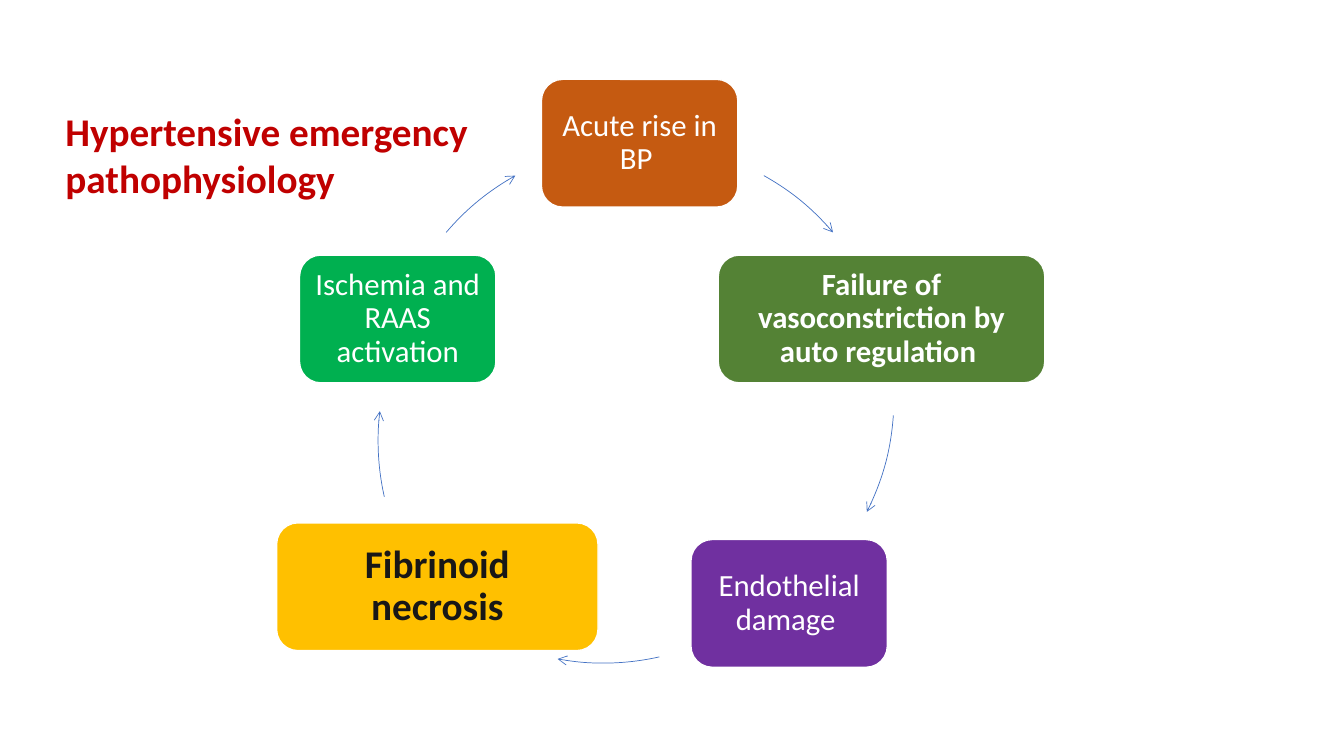
"""Build the hypertensive emergency cycle slide."""
import math
from dataclasses import dataclass

import lxml.etree
import pptx
import pptx.dml.color
import pptx.enum.shapes
import pptx.enum.text
import pptx.oxml.ns
import pptx.util

Cm = pptx.util.Cm
Pt = pptx.util.Pt
Shape = pptx.enum.shapes.MSO_SHAPE
Align = pptx.enum.text.PP_ALIGN
Anchor = pptx.enum.text.MSO_ANCHOR

TITLE = "Hypertensive emergency pathophysiology"
STAGES = [
    dict(text="Acute rise in BP ", fill="C55A11"),
    dict(text="Failure of vasoconstriction by auto regulation ", fill="548235",
         width=8.23, bold=True),
    dict(text="Endothelial damage ", fill="7030A0"),
    dict(text="Fibrinoid necrosis", fill="FFC000", width=8.1, bold=True,
         size=28, color="181717", margin=0.3, shift=(-1.33, -0.42)),
    dict(text="Ischemia and RAAS activation", fill="00B050"),
]
ARROWS = [
    dict(start=299.25, end=319.5),
    dict(start=4, end=26.7),
    dict(start=77.3, end=100.4, shift=(-0.91, 0.28)),
    dict(start=167.3, end=186.7, shift=(-0.18, 1.09)),
    dict(start=220.5, end=240.75),
]
CENTER_X, CENTER_Y, RADIUS = 16.12, 10.02, 6.41
BOX_WIDTH, BOX_HEIGHT = 4.95, 3.22
ADJUSTMENT_PER_DEGREE = 0.6


@dataclass(frozen=True)
class Theme:
    """Colours, font and type sizes."""
    font: str = "Calibri"
    title: str = "C00000"
    light: str = "FFFFFF"
    arrow: str = "4472C4"
    title_size: int = 28
    box_size: int = 22


THEME = Theme()


def rgb(value):
    """Return a colour from its hex value."""
    return pptx.dml.color.RGBColor.from_string(value)


def write(shape, text, *, size, color, bold=False, align=Align.CENTER,
          anchor=Anchor.MIDDLE, spacing=0.9, margins=(0.23, 0.23)):
    """Put formatted text in a shape."""
    frame = shape.text_frame
    frame.word_wrap = True
    frame.auto_size = pptx.enum.text.MSO_AUTO_SIZE.NONE
    frame.vertical_anchor = anchor
    frame.margin_left = frame.margin_right = Cm(margins[0])
    frame.margin_top = frame.margin_bottom = Cm(margins[1])
    para = frame.paragraphs[0]
    para.alignment = align
    para.line_spacing = spacing
    para.space_before = Pt(0)
    span = para.add_run()
    span.text = text
    span.font.name = THEME.font
    span.font.size = Pt(size)
    span.font.bold = bold
    span.font.color.rgb = rgb(color)


def add_centered(page, kind, x, y, width, height):
    """Add a shadowless preset shape around a centre point."""
    shape = page.shapes.add_shape(kind, Cm(x - width / 2), Cm(y - height / 2),
                                  Cm(width), Cm(height))
    shape.shadow.inherit = False
    return shape


def add_stage(page, index, text, fill, width=BOX_WIDTH, bold=False,
              size=THEME.box_size, color=THEME.light, margin=0.23, shift=(0, 0)):
    """Add one stage box at its place on the circle."""
    angle = math.radians(72 * index - 90)
    box = add_centered(page, Shape.ROUNDED_RECTANGLE,
                       CENTER_X + RADIUS * math.cos(angle) + shift[0],
                       CENTER_Y + RADIUS * math.sin(angle) + shift[1],
                       width, BOX_HEIGHT)
    box.fill.solid()
    box.fill.fore_color.rgb = rgb(fill)
    box.line.color.rgb = rgb(THEME.light)
    box.line.width = Pt(1)
    write(box, text, size=size, color=color, bold=bold, margins=(margin, margin))


def add_arrow(page, start, end, shift=(0, 0)):
    """Add a clockwise arc arrow between two angles in degrees."""
    arc = add_centered(page, Shape.ARC, CENTER_X + shift[0], CENTER_Y + shift[1],
                       2 * RADIUS, 2 * RADIUS)
    arc.adjustments[0] = start * ADJUSTMENT_PER_DEGREE
    arc.adjustments[1] = end * ADJUSTMENT_PER_DEGREE
    arc.fill.background()
    arc.line.color.rgb = rgb(THEME.arrow)
    arc.line.width = Pt(0.5)
    outline = arc.element.spPr.find(pptx.oxml.ns.qn("a:ln"))
    lxml.etree.SubElement(outline, pptx.oxml.ns.qn("a:tailEnd"), type="arrow")


def main():
    """Assemble and save the slide."""
    deck = pptx.Presentation()
    deck.slide_width, deck.slide_height = Cm(33.87), Cm(19.05)
    page = deck.slides.add_slide(deck.slide_layouts[5])
    title = page.shapes.title
    title.left, title.top, title.width, title.height = map(Cm, (1.4, 2.57, 12.78, 2.64))
    write(title, TITLE, size=THEME.title_size, color=THEME.title, bold=True,
          align=Align.LEFT, anchor=Anchor.TOP, spacing=1.0, margins=(0.25, 0.13))
    for index, (stage, arrow) in enumerate(zip(STAGES, ARROWS)):
        add_stage(page, index, **stage)
        add_arrow(page, **arrow)
    deck.save("out.pptx")


if __name__ == "__main__":
    main()
